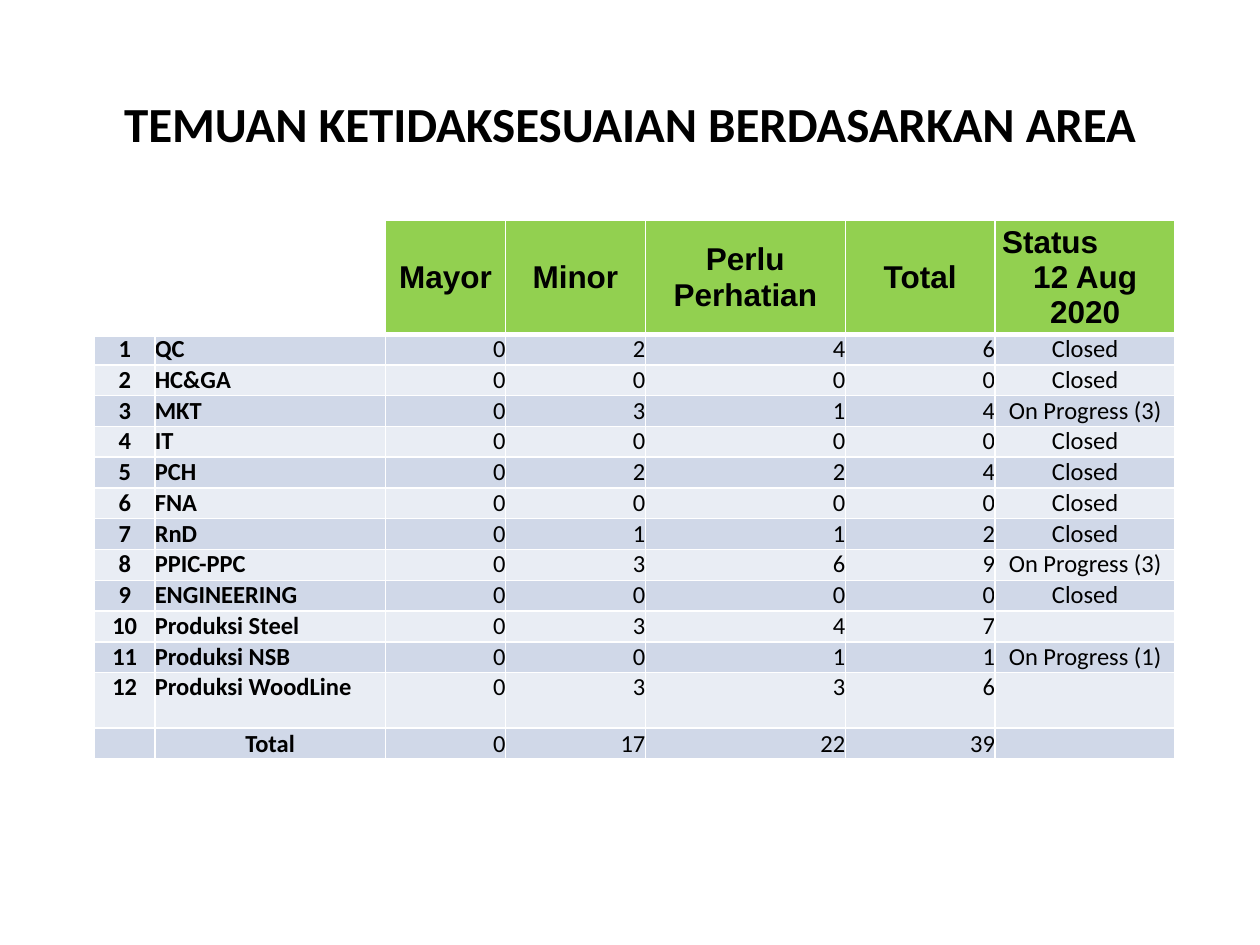
"""Build the slide that lists audit findings by area."""
from lxml.etree import SubElement
from pptx import Presentation
from pptx.dml.color import RGBColor
from pptx.enum.text import MSO_ANCHOR as Anchor, PP_ALIGN as Align
from pptx.oxml.ns import qn
from pptx.util import Cm, Pt

TITLE = "TEMUAN KETIDAKSESUAIAN BERDASARKAN AREA"
HEADERS = ["", "", "Mayor", "Minor", "Perlu Perhatian", "Total", "Status\n12 Aug 2020"]
AREAS = [
    ("QC", 0, 2, 4, 6, "Closed"),
    ("HC&GA", 0, 0, 0, 0, "Closed"),
    ("MKT", 0, 3, 1, 4, "On Progress (3)"),
    ("IT", 0, 0, 0, 0, "Closed"),
    ("PCH", 0, 2, 2, 4, "Closed"),
    ("FNA", 0, 0, 0, 0, "Closed"),
    ("RnD", 0, 1, 1, 2, "Closed"),
    ("PPIC-PPC", 0, 3, 6, 9, "On Progress (3)"),
    ("ENGINEERING", 0, 0, 0, 0, "Closed"),
    ("Produksi Steel", 0, 3, 4, 7, ""),
    ("Produksi NSB", 0, 0, 1, 1, "On Progress (1)"),
    ("Produksi WoodLine", 0, 3, 3, 6, ""),
]
TOTALS = ("", "Total", 0, 17, 22, 39, "")
ROWS = [HEADERS, *((number, *area) for number, area in enumerate(AREAS, 1)), TOTALS]
LAST_ROW = len(ROWS) - 1

COLUMN_WIDTHS = [1.21, 4.65, 2.42, 2.82, 4.03, 3.02, 3.63]
ROW_HEIGHTS = [1.98] + [0.62] * 11 + [1.12, 0.62]
COLUMN_ALIGNS = [Align.CENTER, Align.LEFT] + [Align.RIGHT] * 4 + [Align.CENTER]

WHITE, BLACK, GREEN = "FFFFFF", "000000", "92D050"
BANDS = ["E9EDF4", "D0D8E8"]
TITLE_FONT = {"name": "Calibri", "size": Pt(28), "bold": True}
HEADER_FONT = {"name": "Arial", "size": Pt(18), "bold": True}
LABEL_FONT = {"name": "Calibri", "size": Pt(14), "bold": True}
VALUE_FONT = {**LABEL_FONT, "bold": False}
NO_MARGINS = dict.fromkeys(["margin_left", "margin_top", "margin_right", "margin_bottom"], 0)


def color(value):
    return RGBColor.from_string(value)


def apply(target, values):
    for name, value in values.items():
        setattr(target, name, value)


def write(paragraph, text, font, align):
    paragraph.alignment = align
    if text == "":
        SubElement(paragraph._p, qn("a:endParaRPr"), sz=str(int(font["size"].pt * 100)))
        return
    run = paragraph.add_run()
    run.text = str(text)
    apply(run.font, font)
    run.font.color.rgb = color(BLACK)


def add_borders(cell, widths):
    properties = cell._tc.get_or_add_tcPr()
    for side, width in widths.items():
        line = SubElement(properties, qn(f"a:ln{side}"), w=str(Pt(width)))
        SubElement(SubElement(line, qn("a:solidFill")), qn("a:srgbClr"), val=WHITE)


def cell_style(row, column):
    if row == 0:
        return (GREEN if column > 1 else WHITE), HEADER_FONT, Align.CENTER, Anchor.MIDDLE
    font = LABEL_FONT if column < 2 else VALUE_FONT
    if row == LAST_ROW:
        align = Align.CENTER if column == 1 else COLUMN_ALIGNS[column]
        return BANDS[row % 2], font, align, Anchor.BOTTOM
    return BANDS[row % 2], font, COLUMN_ALIGNS[column], Anchor.TOP


def fill_cell(cell, row, column, text):
    fill, font, align, anchor = cell_style(row, column)
    apply(cell, {**NO_MARGINS, "vertical_anchor": anchor})
    add_borders(cell, {"L": 1, "R": 1, "T": 3 if row == 1 else 1, "B": 3 if row == 0 else 1})
    cell.fill.solid()
    cell.fill.fore_color.rgb = color(fill)
    first, *others = str(text).split("\n")
    paragraph = cell.text_frame.paragraphs[0]
    write(paragraph, first, font, align)
    if others:
        paragraph.alignment = Align.LEFT
        paragraph._p.get_or_add_pPr().set("marL", str(Cm(0.14)))
    for line in others:
        write(cell.text_frame.add_paragraph(), line, font, align)


def add_title(slide):
    frame = slide.shapes.add_textbox(Cm(1.27), Cm(1.48), Cm(22.86), Cm(1.98)).text_frame
    apply(frame, {"word_wrap": True, "vertical_anchor": Anchor.MIDDLE})
    write(frame.paragraphs[0], TITLE, TITLE_FONT, Align.CENTER)


def add_findings_table(slide):
    table = slide.shapes.add_table(
        len(ROWS), len(HEADERS), Cm(1.91), Cm(4.45),
        Cm(sum(COLUMN_WIDTHS)), Cm(sum(ROW_HEIGHTS)),
    ).table
    for column, width in zip(table.columns, COLUMN_WIDTHS):
        column.width = Cm(width)
    for row, height in zip(table.rows, ROW_HEIGHTS):
        row.height = Cm(height)
    for row, values in enumerate(ROWS):
        for column, text in enumerate(values):
            fill_cell(table.cell(row, column), row, column, text)


def main():
    presentation = Presentation()
    apply(presentation, {"slide_width": Cm(25.4), "slide_height": Cm(19.05)})
    slide = presentation.slides.add_slide(presentation.slide_layouts[6])
    add_title(slide)
    add_findings_table(slide)
    presentation.save("out.pptx")


if __name__ == "__main__":
    main()
